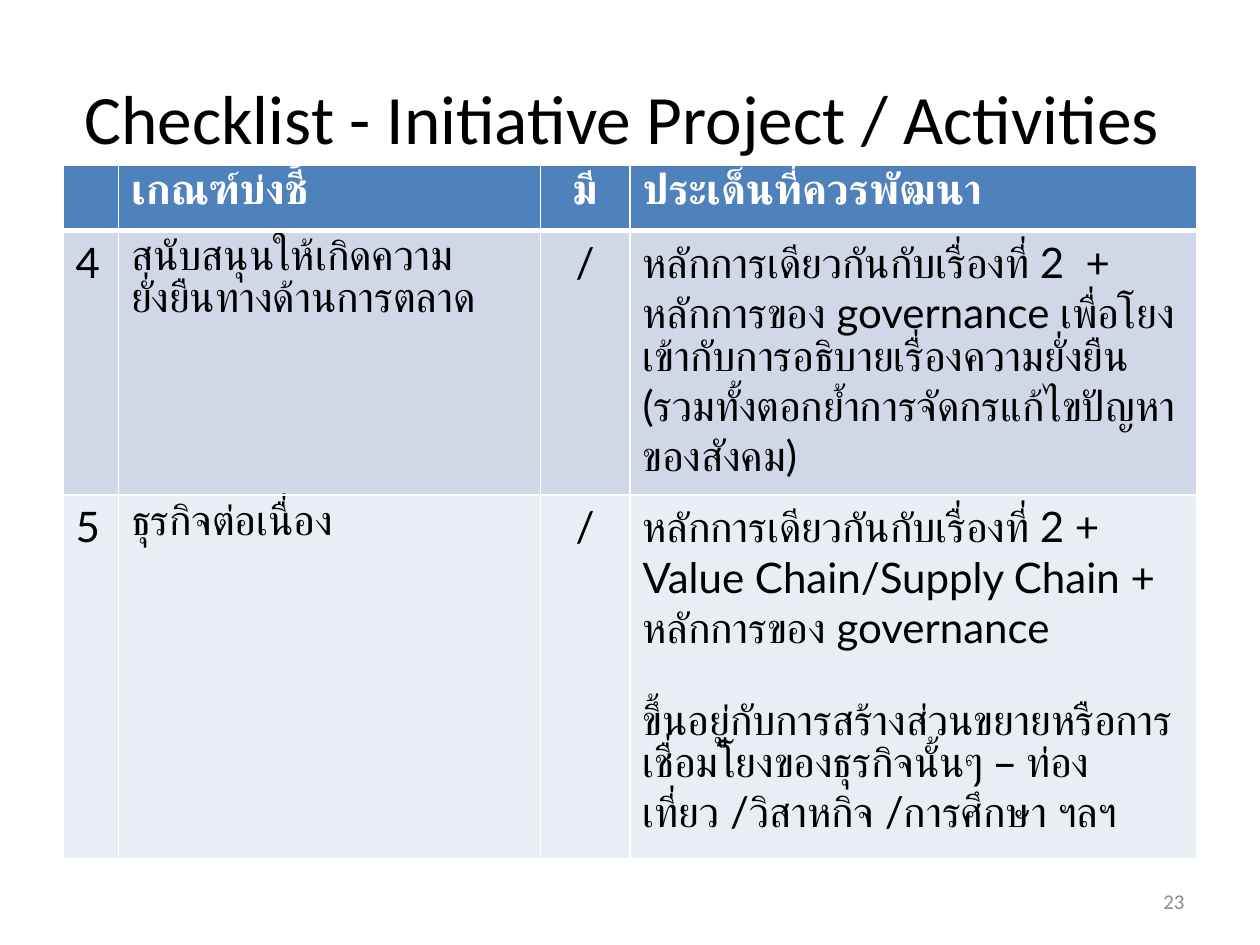
from lxml import etree
from pptx import Presentation
from pptx import util as u
from pptx.dml.color import RGBColor
from pptx.enum import text
from pptx.oxml.ns import qn

COLORS = {"white": "FFFFFF", "black": "000000", "header": "4F81BD",
          "odd": "D0D8E8", "even": "E9EDF4", "number": "8C8C8C"}
LEFT, CENTER, RIGHT = text.PP_ALIGN.LEFT, text.PP_ALIGN.CENTER, text.PP_ALIGN.RIGHT

COLUMNS = [0.44, 3.35, 0.71, 4.5]
ALIGNS = [LEFT, LEFT, CENTER, LEFT]
# Each row: height, fill, then the paragraphs of each cell
ROWS = [
    (0.52, "header", [[], ["เกณฑ์บ่งชี้"], ["มี"], ["ประเด็นที่ควรพัฒนา"]]),
    (0.94, "odd", [
        ["4"], ["สนับสนุนให้เกิดความยั่งยืนทางด้านการตลาด"], ["/"],
        ["หลักการเดียวกันกับเรื่องที่ 2  +  หลักการของ governance "
         "เพื่อโยงเข้ากับการอธิบายเรื่องความยั่งยืน "
         "(รวมทั้งตอกย้ำการจัดกรแก้ไขปัญหาของสังคม)"]]),
    (0.52, "even", [
        ["5"], ["ธุรกิจต่อเนื่อง"], ["/"],
        ["หลักการเดียวกันกับเรื่องที่ 2 + Value Chain/Supply Chain + "
         "หลักการของ governance",
         "ขึ้นอยู่กับการสร้างส่วนขยายหรือการเชื่อมโยงของธุรกิจนั้นๆ – "
         "ท่องเที่ยว /วิสาหกิจ /การศึกษา ฯลฯ"]]),
]


def rgb(name):
    return RGBColor.from_string(COLORS[name])


def add_run(p, content, size, font, color, bold=False):
    r = p.add_run()
    r.text = content
    r.font.size = u.Pt(size)
    r.font.name = font
    r.font.bold = bold
    r.font.color.rgb = rgb(color)


def add_label(slide, box, content, size, color, align):
    tf = slide.shapes.add_textbox(*map(u.Inches, box)).text_frame
    tf.word_wrap = True
    tf.vertical_anchor = text.MSO_ANCHOR.MIDDLE
    p = tf.paragraphs[0]
    p.alignment = align
    add_run(p, content, size, "Calibri", color)


def set_borders(cell, widths):
    tc_pr = cell._tc.get_or_add_tcPr()
    for side, width in zip("LRTB", widths):
        ln = etree.SubElement(tc_pr, qn(f"a:ln{side}"), w=str(u.Pt(width)))
        fill = etree.SubElement(ln, qn("a:solidFill"))
        etree.SubElement(fill, qn("a:srgbClr"), val=COLORS["white"])


def fill_cell(cell, paragraphs, fill, align, is_header, below_header):
    set_borders(cell, (1, 1, 3 if below_header else 1, 3 if is_header else 1))
    cell.fill.solid()
    cell.fill.fore_color.rgb = rgb(fill)
    tf = cell.text_frame
    for i, content in enumerate(paragraphs):
        p = tf.add_paragraph() if i else tf.paragraphs[0]
        p.alignment = align
        if i:
            p.space_before = u.Pt(28)
        add_run(p, content, 24, "Lato", "white" if is_header else "black", is_header)


def add_checklist(slide, box):
    frame = slide.shapes.add_table(len(ROWS), len(COLUMNS), *map(u.Inches, box))
    table = frame.table
    for column, width in zip(table.columns, COLUMNS):
        column.width = u.Inches(width)
    for i, (height, fill, cells) in enumerate(ROWS):
        table.rows[i].height = u.Inches(height)
        for j, paragraphs in enumerate(cells):
            fill_cell(table.cell(i, j), paragraphs, fill, ALIGNS[j], i == 0, i == 1)
    frame.height = u.Inches(box[3])


def main():
    prs = Presentation()
    prs.slide_width, prs.slide_height = u.Inches(10), u.Inches(7.5)
    slide = prs.slides.add_slide(prs.slide_layouts[6])

    # Title
    add_label(slide, (0.5, 0.3, 9, 1.25),
              "Checklist - Initiative Project / Activities ", 39.6, "black", CENTER)
    # Checklist table
    add_checklist(slide, (0.5, 1.31, 9, 5.12))
    # Slide number
    add_label(slide, (7.17, 6.95, 2.33, 0.4), "23", 12, "number", RIGHT)

    prs.save("out.pptx")


if __name__ == "__main__":
    main()
